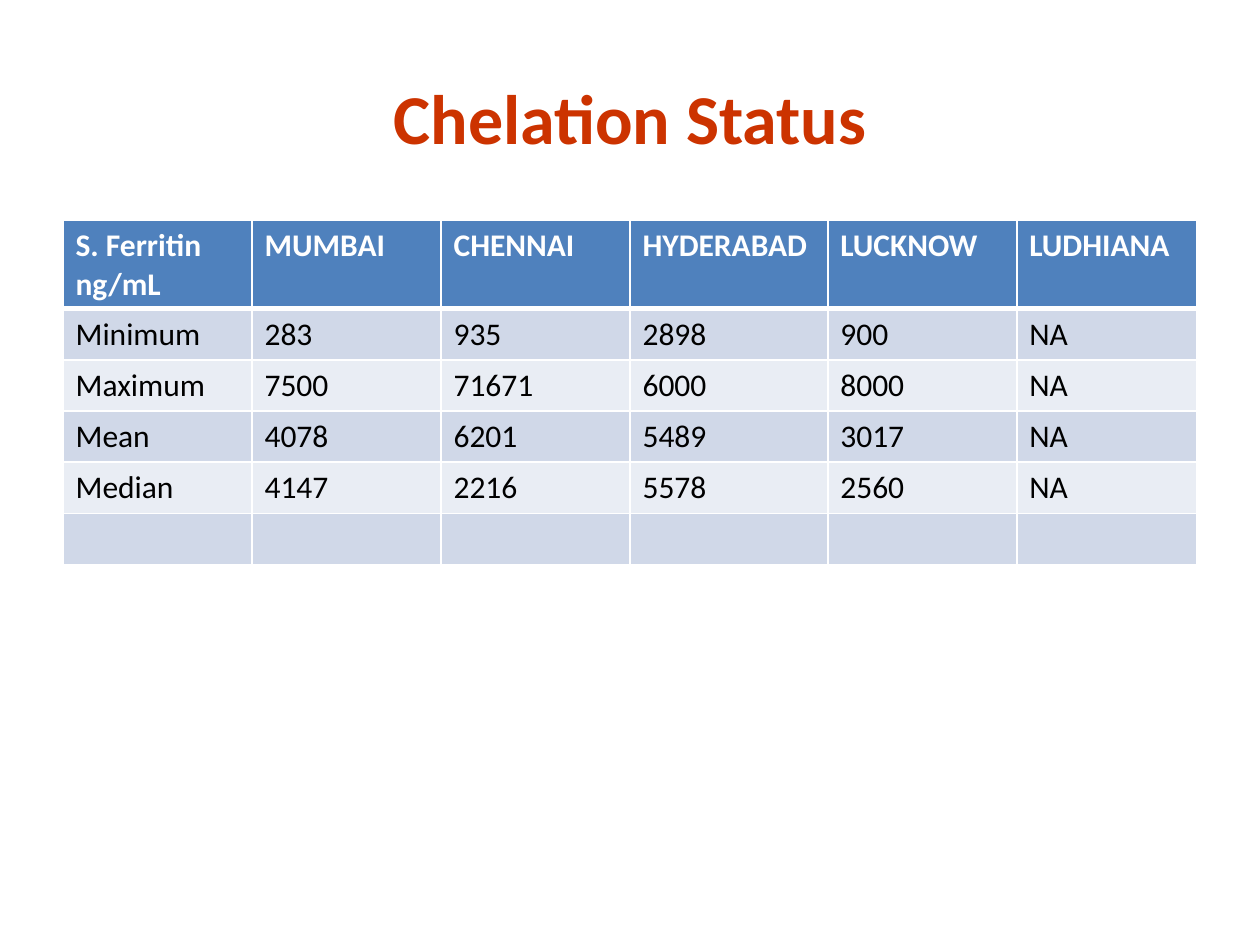
from dataclasses import dataclass

from lxml.etree import SubElement
from pptx import Presentation
from pptx.dml.color import RGBColor
from pptx.enum.text import MSO_ANCHOR, PP_ALIGN
from pptx.oxml.ns import qn
from pptx.util import Inches, Pt


@dataclass(frozen=True)
class Theme:
    font: str = "Calibri"
    title_size: int = 40
    table_size: int = 18
    title: str = "CC3300"
    header: str = "4F81BD"
    bands: tuple = ("D0D8E8", "E9EDF4")
    white: str = "FFFFFF"
    black: str = "000000"
    thin: int = 1
    thick: int = 3


THEME = Theme()

FERRITIN = [
    ["S. Ferritin\nng/mL", "MUMBAI", "CHENNAI", "HYDERABAD", "LUCKNOW", "LUDHIANA"],
    ["Minimum", "283", "935", "2898", "900", "NA"],
    ["Maximum", "7500", "71671", "6000", "8000", "NA"],
    ["Mean", "4078", "6201", "5489", "3017", "NA"],
    ["Median", "4147", "2216", "5578", "2560", "NA"],
    [""] * 6,
]
COLUMN_WIDTHS = [1.5, 1.5, 1.5, 1.57, 1.5, 1.43]
HEADER_HEIGHT = 0.7


def style_text(frame, size, color, bold, align=PP_ALIGN.LEFT):
    for paragraph in frame.paragraphs:
        paragraph.alignment = align
        font = paragraph.font
        font.name, font.size, font.bold = THEME.font, Pt(size), bold
        font.color.rgb = RGBColor.from_string(color)


def set_borders(cell, top, bottom):
    properties = cell._tc.get_or_add_tcPr()
    widths = {"a:lnL": THEME.thin, "a:lnR": THEME.thin, "a:lnT": top, "a:lnB": bottom}
    for side, width in widths.items():
        line = SubElement(properties, qn(side), w=str(Pt(width)))
        SubElement(SubElement(line, qn("a:solidFill")), qn("a:srgbClr"), val=THEME.white)


def add_title(slide, text, left, top, width, height):
    frame = slide.shapes.add_textbox(
        Inches(left), Inches(top), Inches(width), Inches(height)).text_frame
    frame.word_wrap = True
    frame.vertical_anchor = MSO_ANCHOR.MIDDLE
    frame.text = text
    style_text(frame, THEME.title_size, THEME.title, True, PP_ALIGN.CENTER)


def add_ferritin_table(slide, rows, left, top, width, height):
    table = slide.shapes.add_table(
        len(rows), len(rows[0]),
        Inches(left), Inches(top), Inches(width), Inches(height)).table
    for column, column_width in zip(table.columns, COLUMN_WIDTHS):
        column.width = Inches(column_width)
    body_height = (height - HEADER_HEIGHT) / (len(rows) - 1)

    for r, values in enumerate(rows):
        is_header = r == 0
        table.rows[r].height = Inches(HEADER_HEIGHT if is_header else body_height)
        fill = THEME.header if is_header else THEME.bands[(r - 1) % 2]
        color = THEME.white if is_header else THEME.black
        # The heavier rule runs between the header and the first body row
        line_above = THEME.thick if r == 1 else THEME.thin
        line_below = THEME.thick if is_header else THEME.thin
        for c, value in enumerate(values):
            cell = table.cell(r, c)
            cell.text = value
            style_text(cell.text_frame, THEME.table_size, color, is_header)
            set_borders(cell, line_above, line_below)
            cell.fill.solid()
            cell.fill.fore_color.rgb = RGBColor.from_string(fill)


def main():
    deck = Presentation()
    deck.slide_width, deck.slide_height = Inches(10), Inches(7.5)
    slide = deck.slides.add_slide(deck.slide_layouts[6])
    add_title(slide, "Chelation Status", 0.5, 0.3, 9, 1.25)
    add_ferritin_table(slide, FERRITIN, 0.5, 1.75, 9, 2.73)
    deck.save("out.pptx")


if __name__ == "__main__":
    main()
